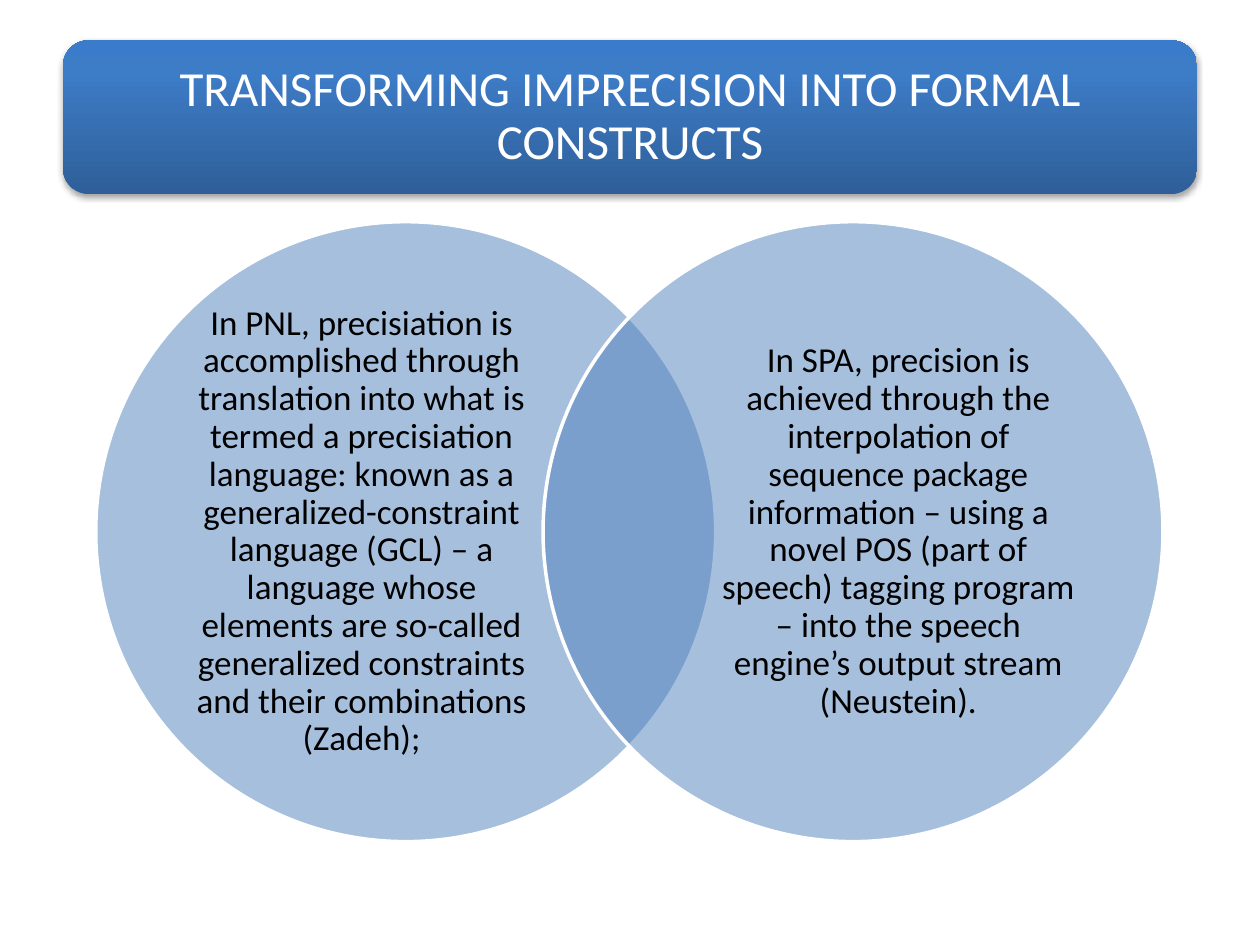
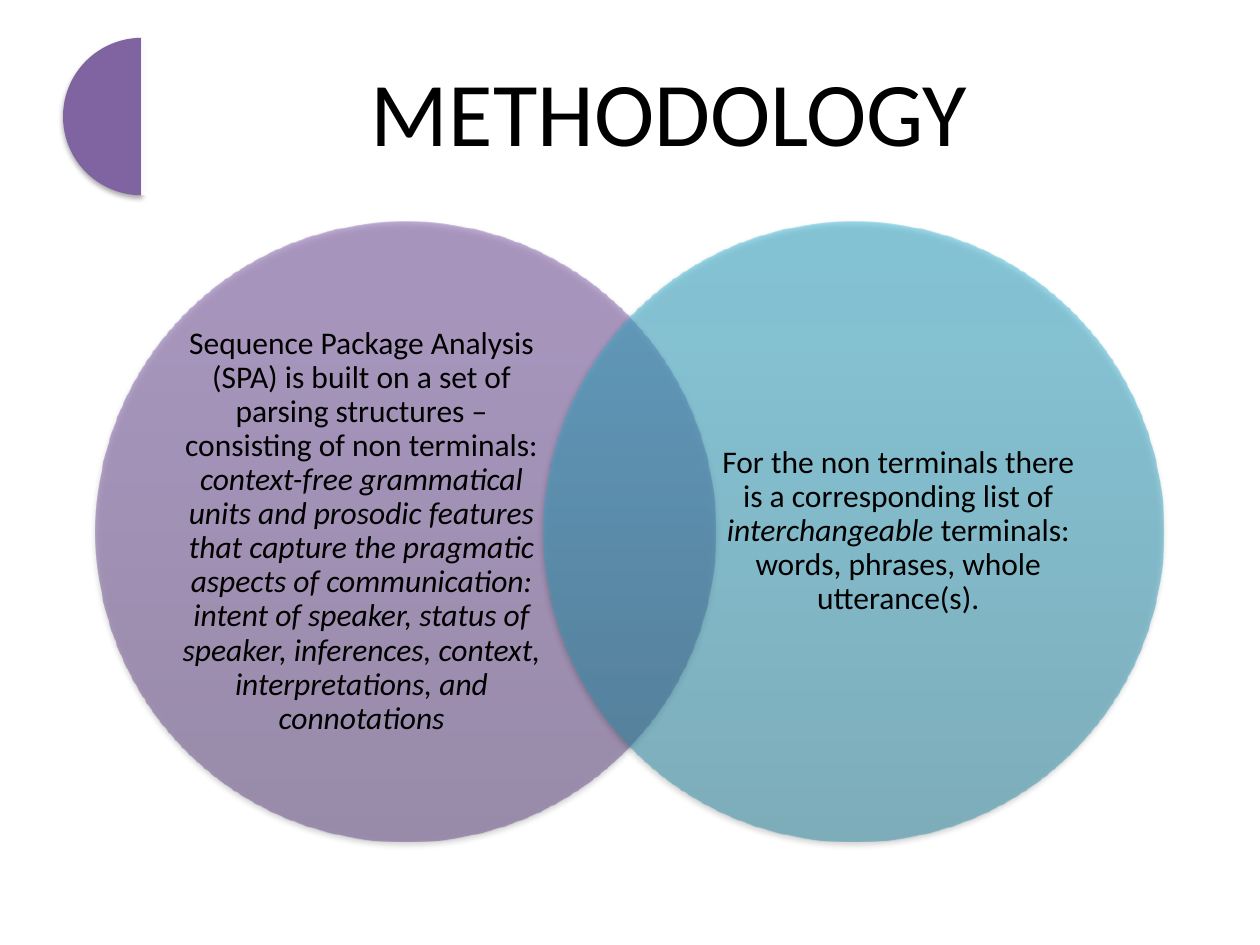
from dataclasses import dataclass

from lxml import etree
from pptx import Presentation
from pptx.dml.color import RGBColor as RGB
from pptx.enum.shapes import MSO_SHAPE as SHAPE
from pptx.enum.text import MSO_ANCHOR as ANCHOR, MSO_AUTO_SIZE as AUTO_SIZE, PP_ALIGN as ALIGN
from pptx.oxml.ns import qn
from pptx.util import Inches, Pt


@dataclass(frozen=True)
class Theme:
    font: str = "Calibri"
    white: str = "FFFFFF"
    black: str = "000000"
    blue: str = "4F81BD"
    purple: str = "8064A2"
    banner_stops: tuple = ((0, "2F5F99"), (80, "3D7CC7"), (100, "3A7CCB"))
    purple_stops: tuple = ((0, "5F4480"), (80, "7B58A6"), (100, "7C57A8"))
    teal_stops: tuple = ((0, "2A88A2"), (80, "37B1D2"), (100, "34B4D6"))
    banner_size: int = 28
    heading_size: int = 52
    formal_size: int = 20
    method_size: int = 18


THEME = Theme()
CIRCLE_LEFT, CIRCLE_TOP, CIRCLE_SIZE, CIRCLE_STEP = 0.76, 1.76, 4.92, 3.55
BODY_LEFT, BODY_TOP, BODY_WIDTH, BODY_HEIGHT, BODY_STEP = 1.45, 2.34, 2.84, 3.76, 4.26


def sub(parent, tag, **attributes):
    return etree.SubElement(parent, qn(tag), {key: str(value) for key, value in attributes.items()})


def add_alpha(color, percent):
    if percent < 100:
        sub(color, "a:alpha", val=percent * 1000)


def fill_shape(shape, paint, opacity=100):
    if isinstance(paint, str):
        shape.fill.solid()
        shape.fill.fore_color.rgb = RGB.from_string(paint)
        add_alpha(shape.element.spPr.find(qn("a:solidFill"))[0], opacity)
        return
    shape.fill.gradient()
    shape.fill.gradient_angle = 90
    stops = shape.element.spPr.find(qn("a:gradFill")).find(qn("a:gsLst"))
    for stop in list(stops):
        stops.remove(stop)
    for position, color in paint:
        stop = sub(stops, "a:gs", pos=position * 1000)
        add_alpha(sub(stop, "a:srgbClr", val=color), opacity)


def add_shadow(shape):
    effects = shape.element.spPr.find(qn("a:effectLst"))
    outer = sub(effects, "a:outerShdw", blurRad=Pt(3.1), dist=Pt(1.8), dir=90 * 60000, rotWithShape=0)
    add_alpha(sub(outer, "a:srgbClr", val=THEME.black), 35)


def add_figure(slide, kind, box, paint, opacity=100, outline=None, shadow=False):
    figure = slide.shapes.add_shape(kind, *map(Inches, box))
    fill_shape(figure, paint, opacity)
    if outline:
        figure.line.color.rgb = RGB.from_string(outline)
        figure.line.width = Pt(2)
    else:
        figure.line.fill.background()
    figure.shadow.inherit = False
    if shadow:
        add_shadow(figure)
    return figure


def write_text(holder, runs, size, color=THEME.black, inset=0):
    frame = holder.text_frame
    frame.word_wrap = True
    frame.auto_size = AUTO_SIZE.NONE
    frame.vertical_anchor = ANCHOR.MIDDLE
    frame.margin_left = frame.margin_right = Inches(inset)
    frame.margin_top = frame.margin_bottom = Inches(inset)
    paragraph = frame.paragraphs[0]
    paragraph.alignment = ALIGN.CENTER
    paragraph.line_spacing = 0.9
    for text, italic in runs:
        run = paragraph.add_run()
        run.text = text
        run.font.name = THEME.font
        run.font.size = Pt(size)
        run.font.italic = italic
        run.font.color.rgb = RGB.from_string(color)


def place_title(slide, text, box, **text_format):
    title = slide.shapes.title
    title.left, title.top, title.width, title.height = map(Inches, box)
    title.element.getparent().append(title.element)
    write_text(title, [(text, False)], **text_format)


def add_venn(slide, passages, paints, size, **circle_format):
    for index, (runs, paint) in enumerate(zip(passages, paints)):
        circle_box = (CIRCLE_LEFT + index * CIRCLE_STEP, CIRCLE_TOP, CIRCLE_SIZE, CIRCLE_SIZE)
        add_figure(slide, SHAPE.OVAL, circle_box, paint, opacity=50, **circle_format)
        body_box = (BODY_LEFT + index * BODY_STEP, BODY_TOP, BODY_WIDTH, BODY_HEIGHT)
        body = slide.shapes.add_textbox(*map(Inches, body_box))
        write_text(body, runs, size)


def build_formal_constructs(slide):
    add_figure(slide, SHAPE.ROUNDED_RECTANGLE, (0.5, 0.32, 9, 1.22), THEME.banner_stops, shadow=True)
    place_title(slide, "TRANSFORMING IMPRECISION INTO FORMAL CONSTRUCTS", (0.56, 0.38, 8.88, 1.1),
                size=THEME.banner_size, color=THEME.white, inset=0.12)
    pnl = [("In PNL, precisiation is accomplished through translation into what is termed a "
            "precisiation language: known as a generalized-constraint language (GCL) – a language "
            "whose elements are so-called generalized constraints and their combinations (Zadeh);", False)]
    spa = [("In SPA, precision is achieved through the interpolation of sequence package information "
            "– using a novel POS (part of speech) tagging program – into the speech engine’s output "
            "stream (Neustein).", False)]
    add_venn(slide, (pnl, spa), (THEME.blue, THEME.blue), THEME.formal_size, outline=THEME.white)


def build_methodology(slide):
    half_disc = add_figure(slide, SHAPE.PIE, (0.5, 0.3, 1.25, 1.25), THEME.purple, shadow=True)
    half_disc.adjustments[0], half_disc.adjustments[1] = 54, 162
    heading_box = (1.12, 0.3, 8.38, 1.25)
    add_figure(slide, SHAPE.RECTANGLE, heading_box, THEME.white, opacity=90)
    place_title(slide, "METHODOLOGY", heading_box, size=THEME.heading_size, inset=0.22)
    non_terminals = [
        ("Sequence Package Analysis (SPA) is built on a set of parsing structures – consisting of "
         "non terminals: ", False),
        ("context-free grammatical units and prosodic features that capture the pragmatic aspects of "
         "communication: intent of speaker, status of speaker, inferences, context, interpretations, "
         "and connotations", True),
    ]
    terminals = [
        ("For the non terminals there is a corresponding list of ", False),
        ("interchangeable ", True),
        ("terminals: words, phrases, whole utterance(s).", False),
    ]
    add_venn(slide, (non_terminals, terminals), (THEME.purple_stops, THEME.teal_stops),
             THEME.method_size, shadow=True)


def main():
    deck = Presentation()
    deck.slide_width, deck.slide_height = Inches(10), Inches(7.5)
    title_only = deck.slide_layouts[5]
    for build in (build_formal_constructs, build_methodology):
        build(deck.slides.add_slide(title_only))
    deck.save("out.pptx")


if __name__ == "__main__":
    main()
